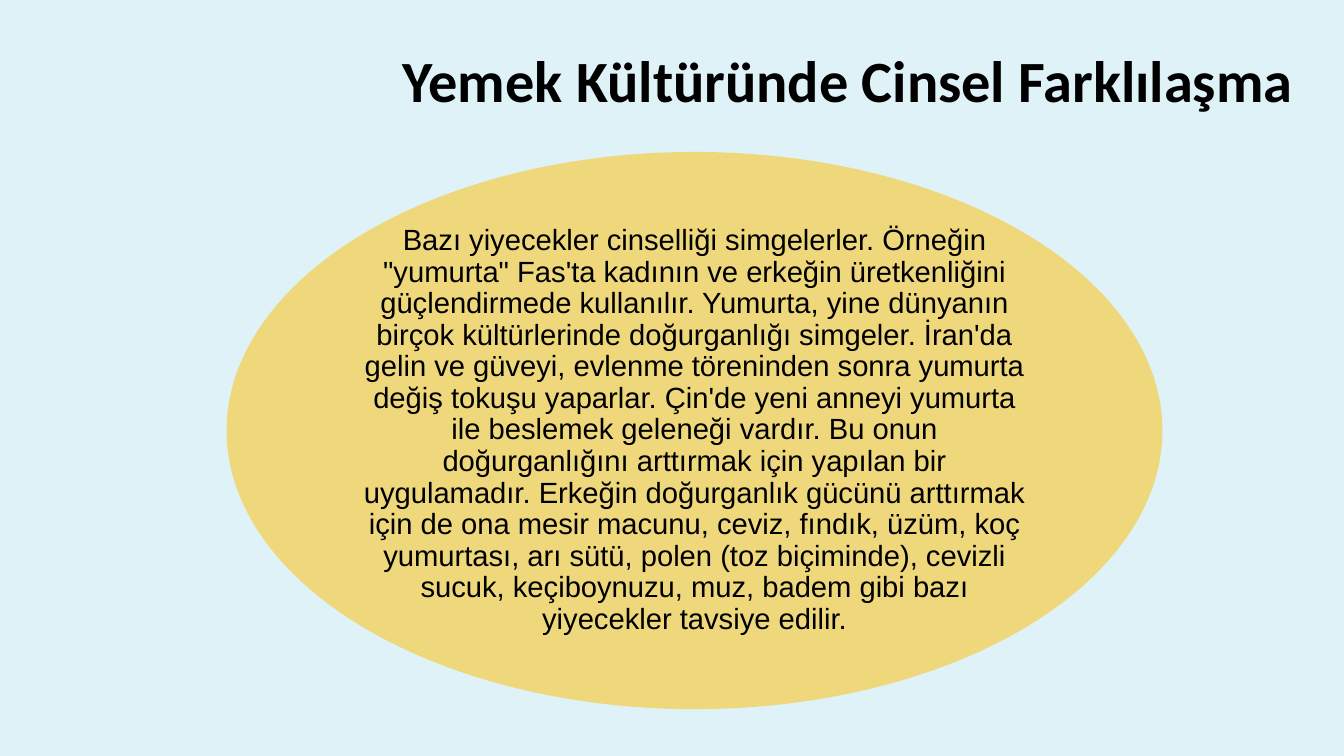
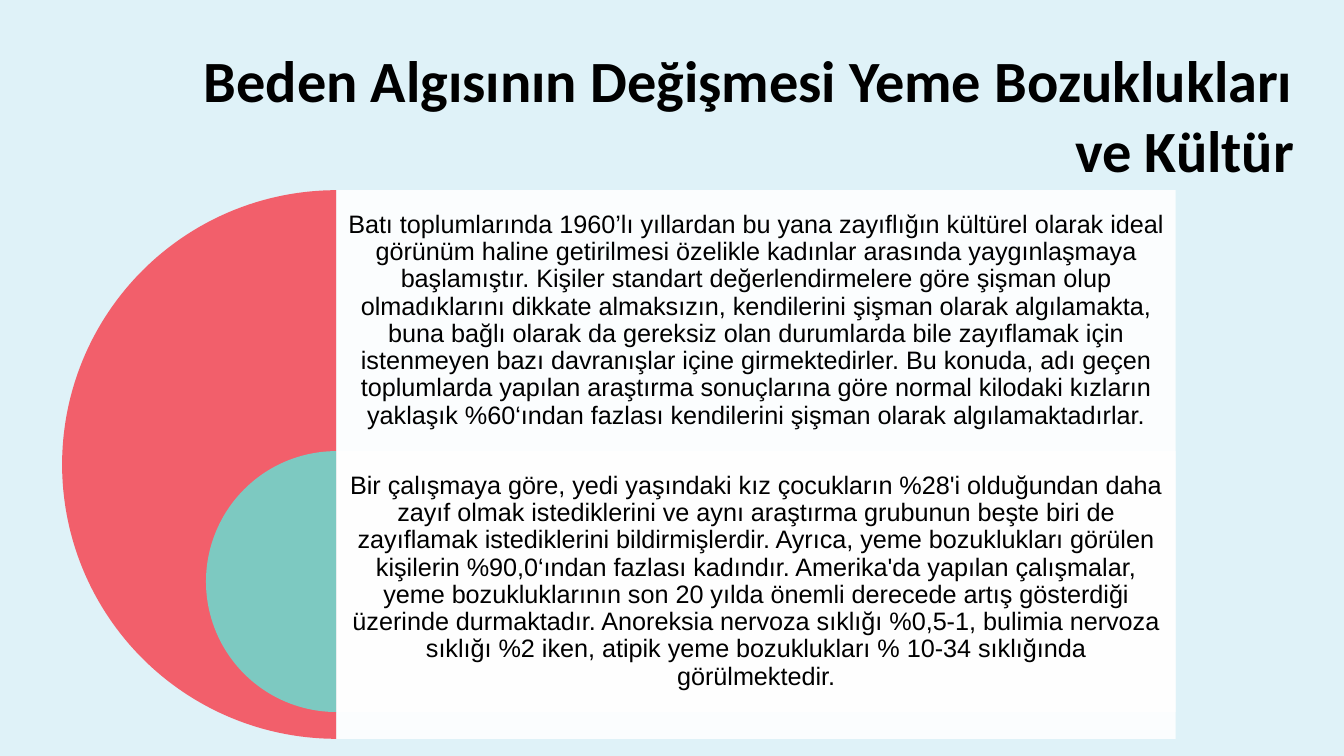
from lxml import etree
from pptx import Presentation
from pptx.dml.color import RGBColor
from pptx.enum.shapes import MSO_SHAPE
from pptx.enum.text import MSO_ANCHOR, MSO_AUTO_SIZE, PP_ALIGN
from pptx.oxml.ns import qn
from pptx.util import Inches, Pt

ELLIPSE, PIE, RECT = MSO_SHAPE.OVAL, MSO_SHAPE.PIE, MSO_SHAPE.RECTANGLE
TOP, MIDDLE = MSO_ANCHOR.TOP, MSO_ANCHOR.MIDDLE
CENTER, RIGHT = PP_ALIGN.CENTER, PP_ALIGN.RIGHT
NO_AUTOFIT = MSO_AUTO_SIZE.NONE

COLORS = {
    "page": "DFF2F8",
    "text": "000000",
    "gold": "FFC000",
    "red": "F25F6B",
    "teal": "7DC9C1",
    "panel": "FFFFFF",
}
TITLE_RIGHT = 13.64
TITLE_TOP = 0.41
HALF_CIRCLE = (54, 162)

SYMBOLS = (
    "Bazı yiyecekler cinselliği simgelerler. Örneğin \"yumurta\" Fas'ta kadının ve "
    "erkeğin üretkenliğini güçlendirmede kullanılır. Yumurta, yine dünyanın birçok "
    "kültürlerinde doğurganlığı simgeler. İran'da gelin ve güveyi, evlenme töreninden "
    "sonra yumurta değiş tokuşu yaparlar. Çin'de yeni anneyi yumurta ile beslemek "
    "geleneği vardır. Bu onun doğurganlığını arttırmak için yapılan bir uygulamadır. "
    "Erkeğin doğurganlık gücünü arttırmak için de ona mesir macunu, ceviz, fındık, "
    "üzüm, koç yumurtası, arı sütü, polen (toz biçiminde), cevizli sucuk, "
    "keçiboynuzu, muz, badem gibi bazı yiyecekler tavsiye edilir."
)
IDEAL_BODY = (
    "Batı toplumlarında 1960’lı yıllardan bu yana zayıflığın kültürel olarak ideal "
    "görünüm haline getirilmesi özelikle kadınlar arasında yaygınlaşmaya başlamıştır. "
    "Kişiler standart değerlendirmelere göre şişman olup olmadıklarını dikkate "
    "almaksızın, kendilerini şişman olarak algılamakta, buna bağlı olarak da gereksiz "
    "olan durumlarda bile zayıflamak için istenmeyen bazı davranışlar içine "
    "girmektedirler. Bu konuda, adı geçen toplumlarda yapılan araştırma sonuçlarına "
    "göre normal kilodaki kızların yaklaşık %60‘ından fazlası kendilerini şişman "
    "olarak algılamaktadırlar."
)
DISORDERS = (
    "Bir çalışmaya göre, yedi yaşındaki kız çocukların %28'i olduğundan daha zayıf "
    "olmak istediklerini ve aynı araştırma grubunun beşte biri de zayıflamak "
    "istediklerini bildirmişlerdir. Ayrıca, yeme bozuklukları görülen kişilerin "
    "%90,0‘ından fazlası kadındır. Amerika'da yapılan çalışmalar, yeme "
    "bozukluklarının son 20 yılda önemli derecede artış gösterdiği üzerinde "
    "durmaktadır. Anoreksia nervoza sıklığı %0,5-1, bulimia nervoza sıklığı %2 iken, "
    "atipik yeme bozuklukları % 10-34 sıklığında görülmektedir."
)


def rgb(name):
    return RGBColor.from_string(COLORS[name])


def write_text(tf, text, size, font="Arial", bold=False, align=CENTER,
               anchor=MIDDLE, spacing=0.9, insets=(0, 0, 0, 0)):
    tf.word_wrap = True
    tf.auto_size = NO_AUTOFIT
    tf.vertical_anchor = anchor
    tf.margin_left, tf.margin_top, tf.margin_right, tf.margin_bottom = map(Inches, insets)
    p = tf.paragraphs[0]
    p.alignment = align
    p.line_spacing = spacing
    r = p.add_run()
    r.text = text
    r.font.name = font
    r.font.size = Pt(size)
    r.font.bold = bold
    r.font.color.rgb = rgb("text")


def add_filled(s, kind, box, color, opacity=100):
    sp = s.shapes.add_shape(kind, *map(Inches, box))
    sp.shadow.inherit = False
    sp.line.fill.background()
    sp.fill.solid()
    sp.fill.fore_color.rgb = rgb(color)
    if opacity < 100:
        clr = sp.fill._xPr.find(".//" + qn("a:srgbClr"))
        etree.SubElement(clr, qn("a:alpha")).set("val", str(opacity * 1000))
    return sp


def add_titled_slide(prs, title, left, height):
    s = prs.slides.add_slide(prs.slide_layouts[5])
    sp = s.shapes.title
    sp.left, sp.top = Inches(left), Inches(TITLE_TOP)
    sp.width, sp.height = Inches(TITLE_RIGHT - left), Inches(height)
    write_text(sp.text_frame, title, 44, font="Calibri", bold=True, align=RIGHT,
               anchor=TOP, spacing=1.0, insets=(0.1, 0.05, 0.1, 0.05))
    return s


def add_ellipse_text(s, box, text):
    sp = add_filled(s, ELLIPSE, box, "gold", opacity=50)
    write_text(sp.text_frame, text, 22)


def add_nested_targets(s, box, row_height, rows):
    left, top, width, height = box
    axis = left + height / 2
    pad = 0.08
    for i, (color, text) in enumerate(rows):
        row_top = top + i * row_height
        size = height if i == 0 else row_height
        pie = add_filled(s, PIE, (axis - size / 2, row_top, size, size), color)
        pie.adjustments[0], pie.adjustments[1] = HALF_CIRCLE
        panel = add_filled(s, RECT, (axis, row_top, left + width - axis, size),
                           "panel", opacity=90)
        write_text(panel.text_frame, text, 19,
                   insets=(pad, pad, pad, pad + size - row_height))


def main():
    prs = Presentation()
    prs.slide_width, prs.slide_height = Inches(14.06), Inches(7.91)
    fill = prs.slide_master.background.fill
    fill.solid()
    fill.fore_color.rgb = rgb("page")

    s = add_titled_slide(prs, "Yemek Kültüründe Cinsel Farklılaşma", 3.8, 0.84)
    add_ellipse_text(s, (2.37, 1.59, 9.79, 5.83), SYMBOLS)

    s = add_titled_slide(prs, "Beden Algısının Değişmesi Yeme Bozuklukları ve Kültür",
                         1.99, 1.58)
    add_nested_targets(s, (0.65, 1.99, 11.65, 5.74), 2.73,
                       [("red", IDEAL_BODY), ("teal", DISORDERS)])

    prs.save("out.pptx")


if __name__ == "__main__":
    main()
